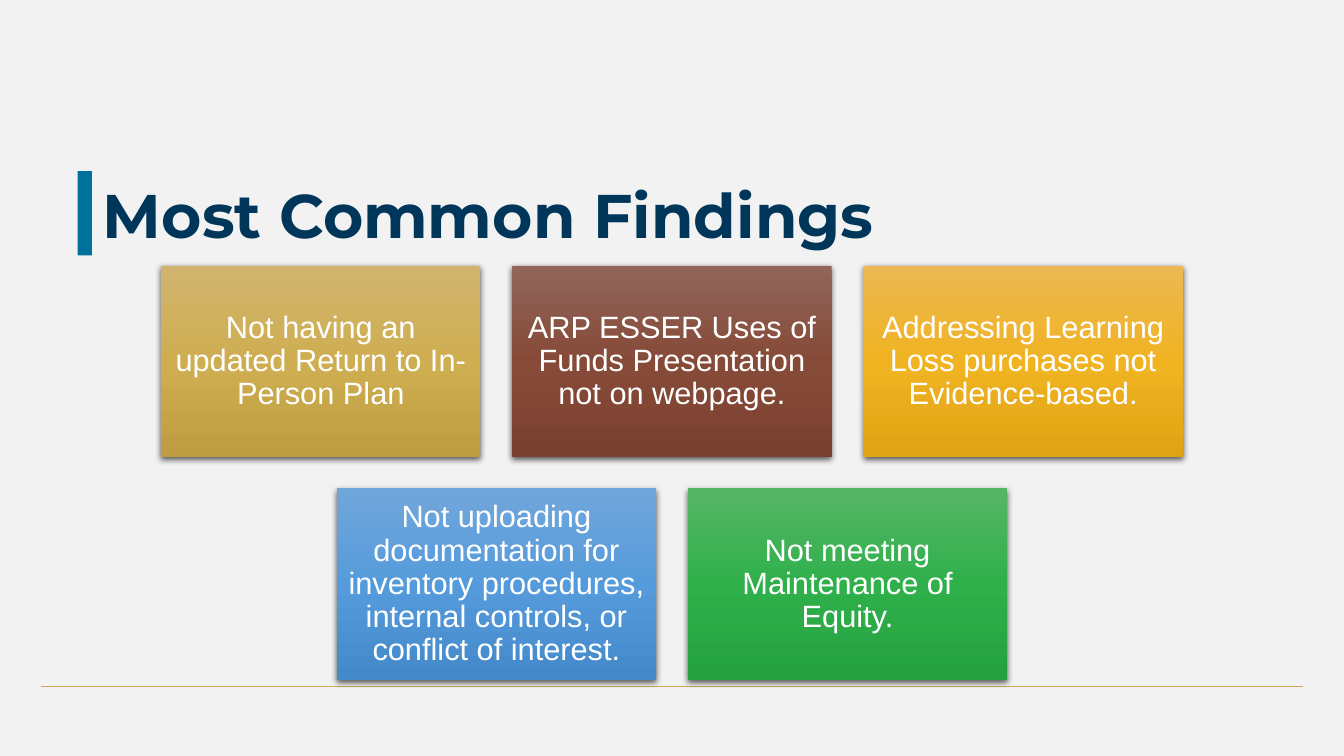
from copy import deepcopy

from lxml import etree
from pptx import Presentation
from pptx import util as u
from pptx.dml.color import RGBColor
from pptx.enum import shapes, text
from pptx.oxml import parse_xml
from pptx.oxml.ns import nsdecls, qn

COLORS = {
    "background": "F2F2F2",
    "rule": "CAAB57",
    "bar": "00719C",
    "title": "00365A",
    "card text": "FFFFFF",
    "gold": ("D0B46E", "CFAE51", "BE9D42"),
    "brown": ("91655B", "864A38", "7A402F"),
    "amber": ("ECB854", "F0B322", "E0A313"),
    "blue": ("71A6DB", "559BDB", "448ACA"),
    "green": ("57B566", "2FB04B", "25A13F"),
}
FINDING_ROWS = [
    [
        ("gold", "Not having an updated Return to In-Person Plan"),
        ("brown", "ARP ESSER Uses of Funds Presentation not on webpage."),
        ("amber", "Addressing Learning Loss purchases not Evidence-based."),
    ],
    [
        ("blue", "Not uploading documentation for inventory procedures, "
                 "internal controls, or conflict of interest."),
        ("green", "Not meeting Maintenance of Equity."),
    ],
]
SLIDE_WIDTH, SLIDE_HEIGHT = 33.87, 19.05
CARD_WIDTH, CARD_HEIGHT = 8.05, 4.83
COLUMN_STEP, ROW_STEP = 8.85, 5.61
FIRST_ROW_TOP = 6.7


def add_span(para, words, font_name, size, color):
    span = para.add_run()
    span.text = words
    span.font.name = font_name
    span.font.size = u.Pt(size)
    span.font.color.rgb = RGBColor.from_string(color)
    return span


def style_card(card, gradient):
    """Give a card its vertical three-stop gradient and soft shadow."""
    card.line.fill.background()
    card.fill.gradient()
    card.fill.gradient_angle = 270
    stop_list = card.fill.gradient_stops[0]._gs.getparent()
    stop_list.insert(1, deepcopy(stop_list[0]))
    for stop, position, color in zip(card.fill.gradient_stops, (0, 0.5, 1), gradient):
        stop.position = position
        stop.color.rgb = RGBColor.from_string(color)
    card.shadow.inherit = False
    effects = card._element.spPr.find(qn("a:effectLst"))
    effects.append(parse_xml(
        f'<a:outerShdw {nsdecls("a")} blurRad="57150" dist="19050" dir="5400000" '
        'algn="ctr" rotWithShape="0"><a:srgbClr val="000000">'
        '<a:alpha val="63000"/></a:srgbClr></a:outerShdw>'))


deck = Presentation()
deck.slide_width, deck.slide_height = u.Cm(SLIDE_WIDTH), u.Cm(SLIDE_HEIGHT)
page = deck.slides.add_slide(deck.slide_layouts[5])
page.background.fill.solid()
page.background.fill.fore_color.rgb = RGBColor.from_string(COLORS["background"])

# Title with its accent bar
title = page.shapes.title
title.left, title.top = u.Cm(2.34), u.Cm(3.66)
title.width, title.height = u.Cm(29.21), u.Cm(3.68)
frame = title.text_frame
frame.word_wrap = True
frame.auto_size = text.MSO_AUTO_SIZE.NONE
frame.vertical_anchor = text.MSO_ANCHOR.MIDDLE
para = frame.paragraphs[0]
para.alignment = text.PP_ALIGN.LEFT
para.line_spacing = 0.9
add_span(para, "Most Common Findings", "Montserrat", 44, COLORS["title"]).font.bold = True

bar = page.shapes.add_shape(
    shapes.MSO_SHAPE.RECTANGLE, u.Cm(1.96), u.Cm(4.31), u.Cm(0.36), u.Cm(2.13))
bar.shadow.inherit = False
bar.fill.solid()
bar.fill.fore_color.rgb = RGBColor.from_string(COLORS["bar"])
bar.line.fill.background()

# Rule along the foot of the page
rule = page.shapes.add_connector(
    shapes.MSO_CONNECTOR.STRAIGHT, u.Cm(1.04), u.Cm(17.3), u.Cm(32.83), u.Cm(17.3))
rule.line.color.rgb = RGBColor.from_string(COLORS["rule"])
rule.line.width = u.Pt(1)
etree.SubElement(rule._element.spPr, qn("a:effectLst"))

# Finding cards, each row centred on the page
for row, findings in enumerate(FINDING_ROWS):
    row_width = (len(findings) - 1) * COLUMN_STEP + CARD_WIDTH
    row_left = (SLIDE_WIDTH - row_width) / 2
    for column, (color_name, words) in enumerate(findings):
        card = page.shapes.add_shape(
            shapes.MSO_SHAPE.RECTANGLE,
            u.Cm(row_left + column * COLUMN_STEP), u.Cm(FIRST_ROW_TOP + row * ROW_STEP),
            u.Cm(CARD_WIDTH), u.Cm(CARD_HEIGHT))
        style_card(card, COLORS[color_name])
        frame = card.text_frame
        frame.word_wrap = True
        frame.vertical_anchor = text.MSO_ANCHOR.MIDDLE
        frame.margin_left = frame.margin_right = u.Cm(0.23)
        frame.margin_top = frame.margin_bottom = u.Cm(0.23)
        para = frame.paragraphs[0]
        para.alignment = text.PP_ALIGN.CENTER
        para.line_spacing = 0.9
        add_span(para, words, "Arial", 22, COLORS["card text"])

deck.save("out.pptx")
